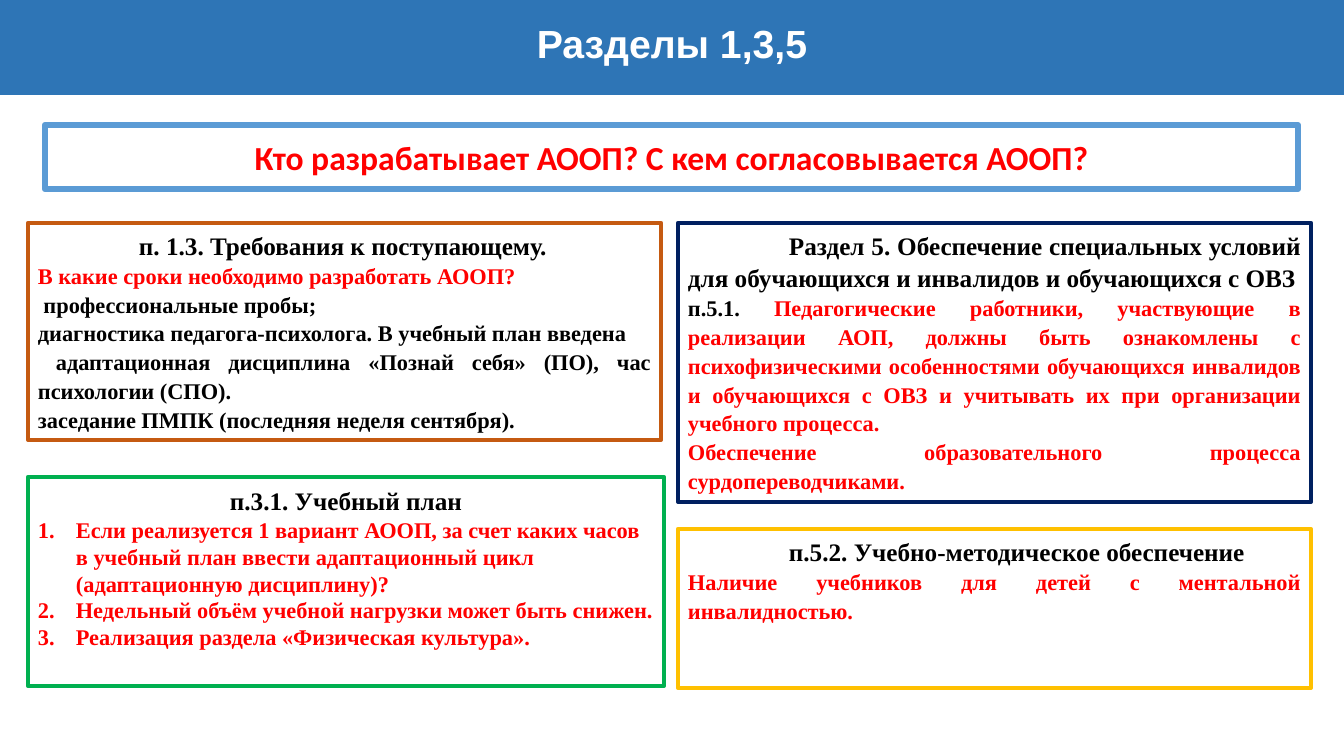
from pptx import Presentation
from pptx.dml.color import RGBColor
from pptx.enum.shapes import MSO_SHAPE
from pptx.enum.text import MSO_ANCHOR, MSO_AUTO_SIZE, PP_ALIGN
from pptx.oxml.ns import qn
from pptx.util import Emu, Pt
from lxml import etree

BLUE = RGBColor(0x2E, 0x75, 0xB6)
SKY = RGBColor(0x5B, 0x9B, 0xD5)
RUST = RGBColor(0xC5, 0x5A, 0x11)
GREEN = RGBColor(0x00, 0xB0, 0x50)
NAVY = RGBColor(0x00, 0x20, 0x60)
GOLD = RGBColor(0xFF, 0xC0, 0x00)
RED = RGBColor(0xFF, 0x00, 0x00)
BLACK = RGBColor(0x00, 0x00, 0x00)
WHITE = RGBColor(0xFF, 0xFF, 0xFF)

LEFT, RIGHT, TOP, WIDE = 28, 678, 223, 633
TAB = 101
HANG = 38


def px(count):
    return Emu(round(count * 914400 / 100.8))


def text(para, *parts, size=16, font="Times New Roman", color=RED,
         align=PP_ALIGN.JUSTIFY, space=1.07, left=0, first=0, number=False):
    para.alignment = align
    para.line_spacing = space
    para.space_before = para.space_after = Pt(0)
    props = para._p.get_or_add_pPr()
    props.set("marL", str(px(left)))
    props.set("indent", str(px(first)))
    if number:
        etree.SubElement(props, qn("a:buAutoNum"), type="arabicPeriod")
    for part in parts:
        words, tint = part if isinstance(part, tuple) else (part, color)
        run = para.add_run()
        run.text = words
        run.font.name = font
        run.font.size = Pt(size)
        run.font.bold = True
        run.font.color.rgb = tint


class Deck:
    def __init__(self):
        self.show = Presentation()
        self.show.slide_width = px(1344)
        self.show.slide_height = px(756)
        self.slide = self.show.slides.add_slide(self.show.slide_layouts[5])

    def title(self, words, x, y, w, h):
        shape = self.slide.shapes.title
        shape.left, shape.top, shape.width, shape.height = map(px, (x, y, w, h))
        shape.fill.solid()
        shape.fill.fore_color.rgb = BLUE
        frame = shape.text_frame
        frame.auto_size = MSO_AUTO_SIZE.NONE
        frame.vertical_anchor = MSO_ANCHOR.MIDDLE
        text(frame.paragraphs[0], words, size=28, font="Arial", color=WHITE,
             align=PP_ALIGN.CENTER, space=0.9)

    def box(self, x, y, w, h, edge, *rows, weight=3, anchor=MSO_ANCHOR.TOP,
            foot=5):
        shape = self.slide.shapes.add_shape(
            MSO_SHAPE.RECTANGLE, *map(px, (x, y, w, h)))
        shape.shadow.inherit = False
        shape.fill.solid()
        shape.fill.fore_color.rgb = WHITE
        shape.line.color.rgb = edge
        shape.line.width = Pt(weight)
        frame = shape.text_frame
        frame.word_wrap = True
        frame.vertical_anchor = anchor
        frame.margin_bottom = px(foot)
        for order, (parts, style) in enumerate(rows):
            para = frame.add_paragraph() if order else frame.paragraphs[0]
            text(para, *parts, **style)


def row(*parts, **style):
    return parts, style


def head(words):
    return row(words, size=18, color=BLACK, first=TAB)


def item(words):
    return row(words, align=PP_ALIGN.LEFT, space=1.0,
               left=HANG, first=-HANG, number=True)


def main():
    deck = Deck()
    deck.title("Разделы 1,3,5", 0, -3, 1344, 98)
    deck.box(
        LEFT, TOP, WIDE, 217, RUST,
        head("п. 1.3. Требования к поступающему."),
        row("В какие сроки необходимо разработать АООП?"),
        row(" профессиональные пробы;", color=BLACK),
        row("диагностика педагога-психолога. В учебный план введена",
            color=BLACK),
        row(" адаптационная дисциплина «Познай себя» (ПО), час "
            "психологии (СПО).", color=BLACK),
        row("заседание ПМПК (последняя неделя сентября).", color=BLACK))
    deck.box(
        LEFT, 477, 636, 209, GREEN,
        row("п.3.1. Учебный план", size=18, color=BLACK,
            align=PP_ALIGN.CENTER, space=1.0),
        item("Если реализуется 1 вариант АООП, за счет каких часов "
             "в учебный план ввести адаптационный цикл "
             "(адаптационную дисциплину)?"),
        item("Недельный объём учебной нагрузки может быть снижен."),
        item("Реализация раздела «Физическая культура»."),
        anchor=MSO_ANCHOR.MIDDLE, foot=32)
    deck.box(
        RIGHT, TOP, WIDE, 279, NAVY,
        head("Раздел 5. Обеспечение специальных условий для обучающихся "
             "и инвалидов и обучающихся с ОВЗ"),
        row(("п.5.1. ", BLACK),
            "Педагогические работники, участвующие в реализации АОП, "
            "должны быть ознакомлены с психофизическими особенностями "
            "обучающихся инвалидов и обучающихся с ОВЗ и учитывать их "
            "при организации учебного процесса."),
        row("Обеспечение образовательного процесса сурдопереводчиками."))
    deck.box(
        RIGHT, 529, WIDE, 159, GOLD,
        head("п.5.2. Учебно-методическое обеспечение"),
        row("Наличие учебников для детей с ментальной инвалидностью."))
    deck.box(
        45, 125, 1253, 64, SKY,
        row("Кто разрабатывает АООП? С кем согласовывается АООП?",
            size=24, font="Calibri", align=PP_ALIGN.CENTER, space=1.0),
        weight=4.5, anchor=MSO_ANCHOR.MIDDLE)
    deck.show.save("out.pptx")


if __name__ == "__main__":
    main()
